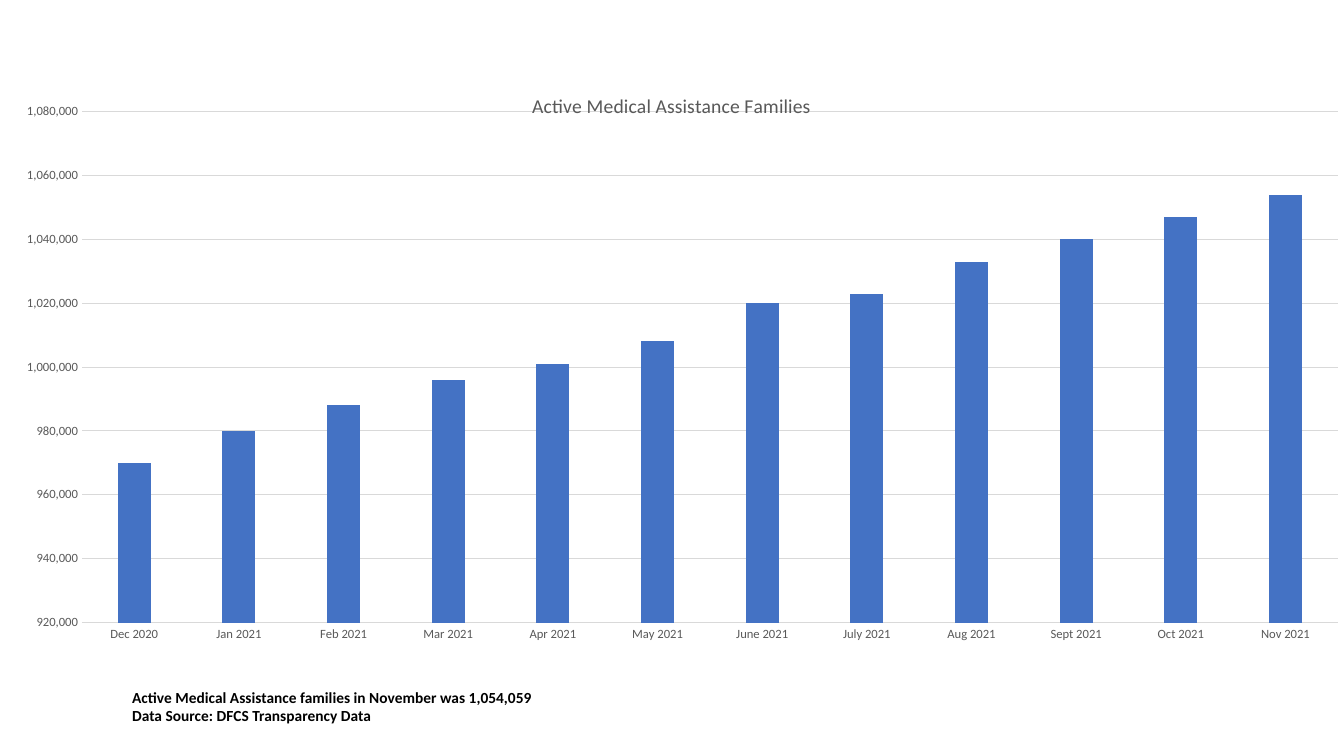
from lxml import etree
from pptx import Presentation
from pptx.chart.data import CategoryChartData
from pptx.dml.color import RGBColor
from pptx.enum.chart import XL_CHART_TYPE, XL_TICK_MARK
from pptx.enum.text import MSO_AUTO_SIZE
from pptx.oxml import parse_xml
from pptx.oxml.ns import nsdecls
from pptx.util import Cm, Pt

COLUMN = XL_CHART_TYPE.COLUMN_CLUSTERED
NO_TICK = XL_TICK_MARK.NONE
GROW = MSO_AUTO_SIZE.SHAPE_TO_FIT_TEXT

BLACK = RGBColor(0x00, 0x00, 0x00)
GRAY = RGBColor(0x59, 0x59, 0x59)
PALE = RGBColor(0xD9, 0xD9, 0xD9)
BLUE = RGBColor(0x44, 0x72, 0xC4)

FACE = "Calibri"
TITLE = "Active Medical Assistance Families"
NOTES = (
    "Active Medical Assistance families in November was 1,054,059",
    "Data Source: DFCS Transparency Data",
)
COUNTS = {
    "Dec 2020": 970000,
    "Jan 2021": 980000,
    "Feb 2021": 988000,
    "Mar 2021": 996000,
    "Apr 2021": 1001000,
    "May 2021": 1008000,
    "June 2021": 1020000,
    "July 2021": 1023000,
    "Aug 2021": 1033000,
    "Sept 2021": 1040000,
    "Oct 2021": 1047000,
    "Nov 2021": 1054000,
}
PLOT = {"x": 0.061, "y": 0.068, "w": 0.935, "h": 0.858}


def style(font, size: float, color: RGBColor, bold: bool = False) -> None:
    font.name = FACE
    font.size = Pt(size)
    font.bold = bold
    font.color.rgb = color


def rule(line) -> None:
    """Give a chart line the thin pale look."""
    line.color.rgb = PALE
    line.width = Pt(0.75)


def place_plot(chart) -> None:
    """Fix the inner plot area as fractions of the chart."""
    area = chart.plots[0]._element.getparent()
    for old in area.findall("{*}layout"):
        area.remove(old)
    layout = parse_xml(f"<c:layout {nsdecls('c')}><c:manualLayout/></c:layout>")
    parts = {"layoutTarget": "inner", "xMode": "edge", "yMode": "edge", **PLOT}
    space = etree.QName(layout).namespace
    for name, value in parts.items():
        etree.SubElement(layout[0], f"{{{space}}}{name}").set("val", str(value))
    area.insert(0, layout)


def add_bars(slide) -> None:
    data = CategoryChartData(number_format="#,##0")
    data.categories = list(COUNTS)
    data.add_series(TITLE, list(COUNTS.values()))
    frame = slide.shapes.add_chart(
        COLUMN, Cm(0), Cm(1.79), Cm(33.85), Cm(15.01), data)
    chart = frame.chart
    style(chart.font, 10, BLACK)
    chart.has_legend = False

    chart.has_title = True
    head = chart.chart_title
    head.text_frame.text = TITLE
    style(head.text_frame.paragraphs[0].runs[0].font, 14, GRAY)
    head.include_in_layout = False

    plot = chart.plots[0]
    plot.gap_width = 219
    plot.overlap = -27
    plot.vary_by_categories = False
    fill = plot.series[0].format.fill
    fill.solid()
    fill.fore_color.rgb = BLUE

    months, scale = chart.category_axis, chart.value_axis
    for axis in (months, scale):
        axis.major_tick_mark = axis.minor_tick_mark = NO_TICK
        style(axis.tick_labels.font, 9, GRAY)
    rule(months.format.line)
    scale.format.line.fill.background()
    scale.has_major_gridlines = True
    rule(scale.major_gridlines.format.line)
    scale.minimum_scale = 920000
    scale.maximum_scale = 1080000
    scale.major_unit = 20000
    scale.tick_labels.number_format = "#,##0"
    scale.tick_labels.number_format_is_linked = False
    place_plot(chart)


def add_notes(slide) -> None:
    box = slide.shapes.add_textbox(Cm(3.08), Cm(17.21), Cm(30.45), Cm(1.19))
    text = box.text_frame
    text.word_wrap = True
    text.auto_size = GROW
    text.text = "\n".join(NOTES)
    for line in text.paragraphs:
        style(line.runs[0].font, 11, BLACK, bold=True)


def main() -> None:
    deck = Presentation()
    deck.slide_width, deck.slide_height = Cm(33.87), Cm(19.05)
    slide = deck.slides.add_slide(deck.slide_layouts[6])
    add_notes(slide)
    add_bars(slide)
    deck.save("out.pptx")


if __name__ == "__main__":
    main()
